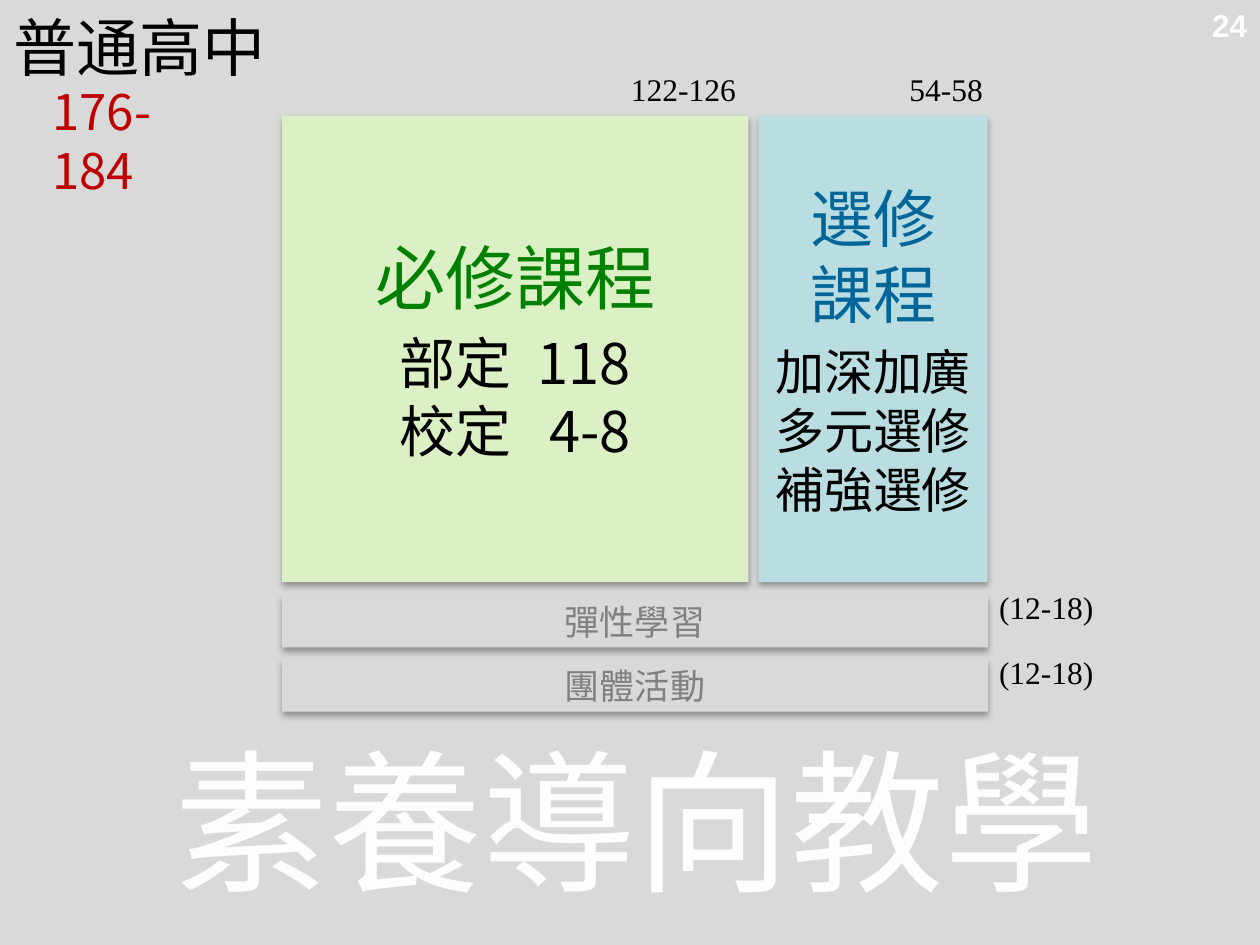
from pptx import Presentation
from pptx.dml.color import RGBColor
from pptx.enum.shapes import MSO_SHAPE as Shape
from pptx.enum.text import MSO_ANCHOR as Anchor, MSO_AUTO_SIZE as AutoSize, PP_ALIGN as Align
from pptx.oxml import parse_xml
from pptx.oxml.ns import nsdecls, qn
from pptx.util import Pt

GREY = RGBColor(0xD9, 0xD9, 0xD9)
PALE_GREEN = RGBColor(0xDC, 0xF0, 0xC6)
PALE_BLUE = RGBColor(0xBA, 0xDD, 0xE1)
GREEN = RGBColor(0x00, 0x80, 0x00)
BLUE = RGBColor(0x00, 0x66, 0x99)
RED = RGBColor(0xC0, 0x00, 0x00)
DIM = RGBColor(0x80, 0x80, 0x80)
OFF_WHITE = RGBColor(0xFD, 0xFD, 0xFD)
WHITE = RGBColor(0xFF, 0xFF, 0xFF)
BLACK = RGBColor(0x00, 0x00, 0x00)

CJK, CJK_SC = "Noto Sans CJK JP", "Noto Sans CJK SC"
SERIF, SANS = "Times New Roman", "Arial"


class SlideBuilder:
    def __init__(self, slide):
        self.s = slide

    def run(self, p, text, size, color, font=CJK, bold=False, spacing=0):
        """Add a run; spacing is extra points after each character."""
        r = p.add_run()
        r.text = text
        r.font.size, r.font.name, r.font.bold = Pt(size), font, bold
        r.font.color.rgb = color
        rPr = r.font._element
        if spacing:
            rPr.set("spc", str(round(spacing * 100)))
        rPr.find(qn("a:latin")).addnext(
            parse_xml(f'<a:ea {nsdecls("a")} typeface="{font}"/>'))

    def line(self, tf, text, size, color, font=CJK, align=Align.CENTER, after=0, bold=False):
        """Add a paragraph with one run, reusing the first empty paragraph."""
        p = tf.paragraphs[0]
        if p.runs:
            p = tf.add_paragraph()
        p.alignment, p.space_after = align, Pt(after)
        self.run(p, text, size, color, font, bold)
        return p

    def block(self, x, y, w, h, fill, shadow=False):
        sp = self.s.shapes.add_shape(Shape.RECTANGLE, Pt(x), Pt(y), Pt(w), Pt(h))
        sp.shadow.inherit = False
        sp.fill.solid()
        sp.fill.fore_color.rgb = fill
        sp.line.fill.background()
        if shadow:
            sp._element.spPr.find(qn("a:effectLst")).append(parse_xml(
                f'<a:outerShdw {nsdecls("a")} blurRad="{Pt(3.5)}" dist="{Pt(2.2)}" '
                'dir="5400000" rotWithShape="0"><a:srgbClr val="000000">'
                '<a:alpha val="32000"/></a:srgbClr></a:outerShdw>'))
        tf = sp.text_frame
        tf.word_wrap = True
        tf.vertical_anchor = Anchor.MIDDLE
        return tf

    def label(self, x, y, w, h, text, size, color=BLACK, font=CJK,
              align=Align.LEFT, bold=False, wrap=False):
        tf = self.s.shapes.add_textbox(Pt(x), Pt(y), Pt(w), Pt(h)).text_frame
        tf.word_wrap = wrap
        tf.auto_size = AutoSize.SHAPE_TO_FIT_TEXT
        self.line(tf, text, size, color, font, align, bold=bold)


def main():
    prs = Presentation()
    prs.slide_width, prs.slide_height = Pt(720), Pt(540)
    b = SlideBuilder(prs.slides.add_slide(prs.slide_layouts[6]))

    b.block(0, 0, 720, 406.8, GREY)
    banner = b.block(0, 406, 720, 134, GREY)
    p = b.line(banner, "素養導向教學", 88, OFF_WHITE, CJK_SC)
    p.line_spacing = 0.95
    p._p.get_or_add_pPr().set("marL", str(Pt(7.2)))
    p._p.get_or_add_pPr().set("indent", "0")

    left, top, height = 161.3, 66.2, 266.4
    required = b.block(left, top, 266.4, height, PALE_GREEN, shadow=True)
    b.line(required, "必修課程", 40, GREEN, after=6)
    for kind, credits, gap in (("部定", "118", 7.2), ("校定", "4-8", 14.4)):
        p = b.line(required, kind, 32, BLACK)
        b.run(p, " ", 32, BLACK, spacing=gap)
        b.run(p, credits, 32, BLACK)

    elective = b.block(433.4, top, 131, height, PALE_BLUE, shadow=True)
    b.line(elective, "選修", 36, BLUE)
    b.line(elective, "課程", 36, BLUE, after=6)
    for course in ("加深加廣", "多元選修", "補強選修"):
        b.line(elective, course, 28, BLACK)

    for i, activity in enumerate(("彈性學習", "團體活動")):
        tf = b.block(left, 339.8 + i * 36.7, 403.2, 30.2, GREY, shadow=True)
        b.line(tf, activity, 20, DIM)

    for x, y, w, credits in ((353.5, 36.7, 74.9, "122-126"), (512.6, 36.7, 56.9, "54-58"),
                             (563.8, 332.6, 69.1, "(12-18)"), (563.8, 369.4, 69.1, "(12-18)")):
        b.label(x, y, w, 28.8, credits, 18, font=SERIF)

    b.label(-0.7, 1.4, 159.8, 51.1, "普通高中", 36, align=Align.RIGHT)
    b.label(23, 43.2, 112.3, 41, "176-184", 28, RED, wrap=True)
    b.label(685.4, 0, 34.6, 28.8, "24", 18, WHITE, SANS, Align.CENTER, bold=True)

    prs.save("out.pptx")


if __name__ == "__main__":
    main()
